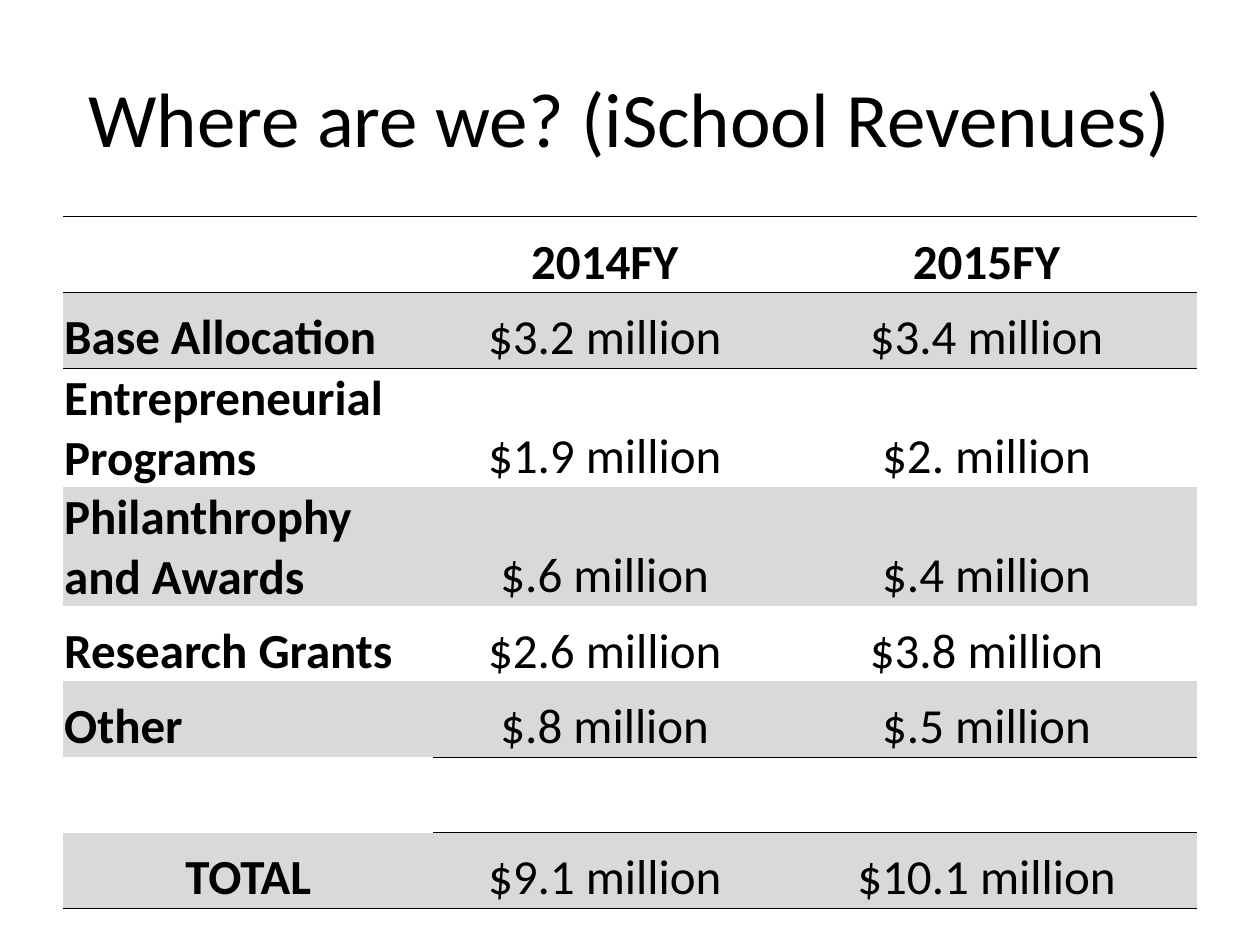
from lxml.etree import SubElement
from pptx import Presentation
from pptx.dml.color import RGBColor
from pptx.enum.text import MSO_ANCHOR as Anchor, PP_ALIGN as Align
from pptx.oxml.ns import qn
from pptx.util import Inches, Pt

BLACK = RGBColor(0x00, 0x00, 0x00)
BAND_GRAY = RGBColor(0xD9, 0xD9, 0xD9)
FONT = "Calibri"
NO_STYLE_NO_GRID = "{2D5ABB26-0587-4C30-8999-92F81FD0307C}"

REVENUES = [
    ("", "2014FY", "2015FY"),
    ("Base Allocation", "$3.2 million", "$3.4 million"),
    ("Entrepreneurial Programs", "$1.9 million", "$2. million"),
    ("Philanthrophy and Awards", "$.6 million", "$.4 million"),
    ("Research Grants", "$2.6 million", "$3.8 million"),
    ("Other", "$.8 million", "$.5 million"),
    ("", "", ""),
    ("TOTAL", "$9.1 million", "$10.1 million"),
]
COLUMN_WIDTHS = (2.94, 2.72, 3.34)
ROW_HEIGHT = 0.6
HEADER, OTHER, GAP, TOTAL = 0, 5, 6, 7
RULED_ABOVE = {HEADER, HEADER + 1, GAP}
RULED_BELOW = {HEADER, OTHER, TOTAL}
CELL_FORMAT = {
    "vertical_anchor": Anchor.BOTTOM,
    "margin_left": Inches(0.01),
    "margin_right": Inches(0.01),
    "margin_top": Inches(0.01),
    "margin_bottom": 0,
}


def write(frame, text, size, align, bold=False):
    paragraph = frame.paragraphs[0]
    paragraph.alignment = align
    run = paragraph.add_run()
    run.text = text
    font_format = {"name": FONT, "size": Pt(size), "bold": bold}
    for name, value in font_format.items():
        setattr(run.font, name, value)
    run.font.color.rgb = BLACK


def add_rule(cell, side):
    """Draw a thin black border; side is the tag a:lnT or a:lnB."""
    line = SubElement(cell._tc.get_or_add_tcPr(), qn(side), w=str(Pt(0.5)))
    fill = SubElement(line, qn("a:solidFill"))
    SubElement(fill, qn("a:srgbClr"), val=str(BLACK))


prs = Presentation()
prs.slide_width, prs.slide_height = Inches(10), Inches(7.5)
slide = prs.slides.add_slide(prs.slide_layouts[6])

title = slide.shapes.add_textbox(
    Inches(0.5), Inches(0.3), Inches(9), Inches(1.25)
).text_frame
title.word_wrap = True
title.vertical_anchor = Anchor.MIDDLE
write(title, "Where are we? (iSchool Revenues)", 44, Align.CENTER)

table = slide.shapes.add_table(
    len(REVENUES), len(COLUMN_WIDTHS), Inches(0.5), Inches(1.72),
    Inches(sum(COLUMN_WIDTHS)), Inches(ROW_HEIGHT * len(REVENUES)),
).table
table.first_row = table.horz_banding = False
table._tbl.tblPr.find(qn("a:tableStyleId")).text = NO_STYLE_NO_GRID
for column, width in zip(table.columns, COLUMN_WIDTHS):
    column.width = Inches(width)

for r, entries in enumerate(REVENUES):
    table.rows[r].height = Inches(ROW_HEIGHT)
    for c, entry in enumerate(entries):
        cell = table.cell(r, c)
        for name, value in CELL_FORMAT.items():
            setattr(cell, name, value)

        # The subtotal rule between Other and the gap spans only the amounts.
        if r in RULED_ABOVE and (r != GAP or c > 0):
            add_rule(cell, "a:lnT")
        if r in RULED_BELOW and (r != OTHER or c > 0):
            add_rule(cell, "a:lnB")

        if r % 2:
            cell.fill.solid()
            cell.fill.fore_color.rgb = BAND_GRAY
        else:
            cell.fill.background()

        if entry:
            is_row_label = c == 0 and r != TOTAL
            write(cell.text_frame, entry, 28,
                  Align.LEFT if is_row_label else Align.CENTER,
                  bold=c == 0 or r == HEADER)

prs.save("out.pptx")
